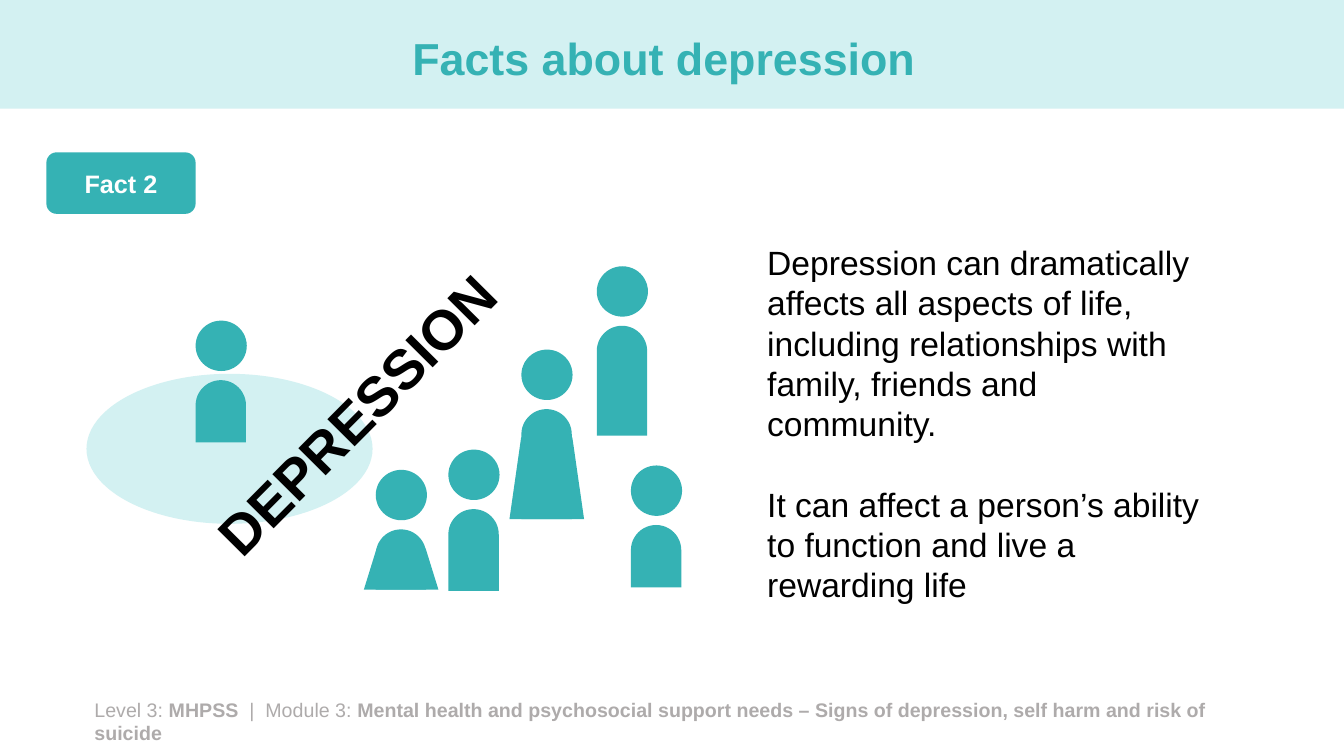
from pptx import Presentation
from pptx import util as u
from pptx.dml.color import RGBColor
from pptx.enum import shapes, text
from pptx.oxml.xmlchemy import OxmlElement

Cm, Pt = u.Cm, u.Pt
KIND = shapes.MSO_SHAPE
TEAL = RGBColor(0x35, 0xB2, 0xB4)
PALE = RGBColor(0xD3, 0xF1, 0xF2)
GREY = RGBColor(0xAE, 0xAB, 0xAB)
WHITE = RGBColor(0xFF, 0xFF, 0xFF)
BLACK = RGBColor(0, 0, 0)


def draw(parent, kind, box, fill, *adj):
    shape = parent.add_shape(kind, *map(Cm, box))
    shape.shadow.inherit = False
    shape.fill.solid()
    shape.fill.fore_color.rgb = fill
    shape.line.fill.background()
    for i, value in enumerate(adj):
        shape.adjustments[i] = value
    return shape


def style(par, size, color, bold=False, align=text.PP_ALIGN.LEFT):
    font = par.font
    font.name, font.size, font.bold = "Arial", Pt(size), bold
    font.color.rgb = color
    par.alignment = align


deck = Presentation()
deck.slide_width, deck.slide_height = Cm(33.87), Cm(19.05)
slide = deck.slides.add_slide(deck.slide_layouts[1])
parts = slide.shapes
mid = text.PP_ALIGN.CENTER

# Band behind the title
band = draw(parts, KIND.RECTANGLE, (0, 0, 33.87, 2.74), PALE)
parts._spTree.insert(2, band._element)

# Title
title = parts.title
title.left, title.top, title.width, title.height = map(Cm, (2.13, 0.33, 29.21, 2.41))
frame = title.text_frame
frame.text = "Facts about depression"
frame.auto_size = text.MSO_AUTO_SIZE.NONE
frame.vertical_anchor = text.MSO_ANCHOR.MIDDLE
style(frame.paragraphs[0], 32, TEAL, True, mid)
frame.paragraphs[0].line_spacing = 0.9

# Body text
body = slide.placeholders[1]
body.left, body.top, body.width, body.height = map(Cm, (19.08, 5.84, 11.63, 9.65))
frame = body.text_frame
frame.text = (
    "Depression can dramatically affects all aspects of life, including "
    "relationships with family, friends and community.\n"
    "It can affect a person’s ability to function and live a rewarding life"
)
frame.auto_size = text.MSO_AUTO_SIZE.NONE
frame.vertical_anchor = text.MSO_ANCHOR.MIDDLE
for par, gap in zip(frame.paragraphs, (0, 28.8)):
    style(par, 24, BLACK)
    par.space_before = Pt(gap)
    props = par._p.get_or_add_pPr()
    props.set("marL", "0")
    props.set("indent", "0")
    props.append(OxmlElement("a:buNone"))
    # Bullet settings come before the font defaults
    props.append(props.find("{*}defRPr"))

# Footer
foot = parts.add_textbox(*map(Cm, (2.13, 17.45, 28.83, 1.45)))
foot.text_frame.word_wrap = True
par = foot.text_frame.paragraphs[0]
style(par, 14, GREY)
for words, bold in (
    ("Level 3: ", False),
    ("MHPSS", True),
    ("  |  Module 3: ", False),
    ("Mental health and psychosocial support needs – Signs of depression, "
     "self harm and risk of suicide", True),
):
    run = par.add_run()
    run.text = words
    run.font.bold = bold

# Fact label
label = draw(parts, KIND.ROUNDED_RECTANGLE, (1.17, 3.84, 3.76, 1.55), TEAL, 0.167)
label.text_frame.text = "Fact 2"
label.text_frame.vertical_anchor = text.MSO_ANCHOR.MIDDLE
style(label.text_frame.paragraphs[0], 18, WHITE, True, mid)

# Isolation oval and slanted word
draw(parts, KIND.OVAL, (2.18, 9.42, 7.21, 3.78), PALE)
word = parts.add_textbox(*map(Cm, (3.66, 8.92, 10.62, 3.02)))
word.rotation = 314.8
frame = word.text_frame
frame.word_wrap = True
frame.vertical_anchor = text.MSO_ANCHOR.MIDDLE
frame.text = "DEPRESSION"
style(frame.paragraphs[0], 40, BLACK, True, mid)

# People: left, top, body height, skirt height, skirt slope
people = [
    (4.93, 8.08, 1.57, 0, 0),
    (13.14, 8.81, 2.77, 2.06, 0.157),
    (15.04, 6.71, 2.77, 0, 0),
    (15.9, 11.73, 1.57, 0, 0),
    (9.47, 11.84, 1.52, 1.04, 0.31),
    (11.3, 11.33, 2.06, 0, 0),
]
for left, top, tall, skirt, slope in people:
    group = parts.add_group_shape().shapes
    chest = top + 1.5
    draw(group, KIND.ROUND_2_SAME_RECTANGLE, (left, chest, 1.27, tall), TEAL, 0.5, 0)
    draw(group, KIND.OVAL, (left, top, 1.29, 1.27), TEAL)
    if skirt:
        hem = chest + tall
        draw(group, KIND.TRAPEZOID, (left - 0.3, hem - skirt, 1.88, skirt), TEAL, slope)

deck.save("out.pptx")
